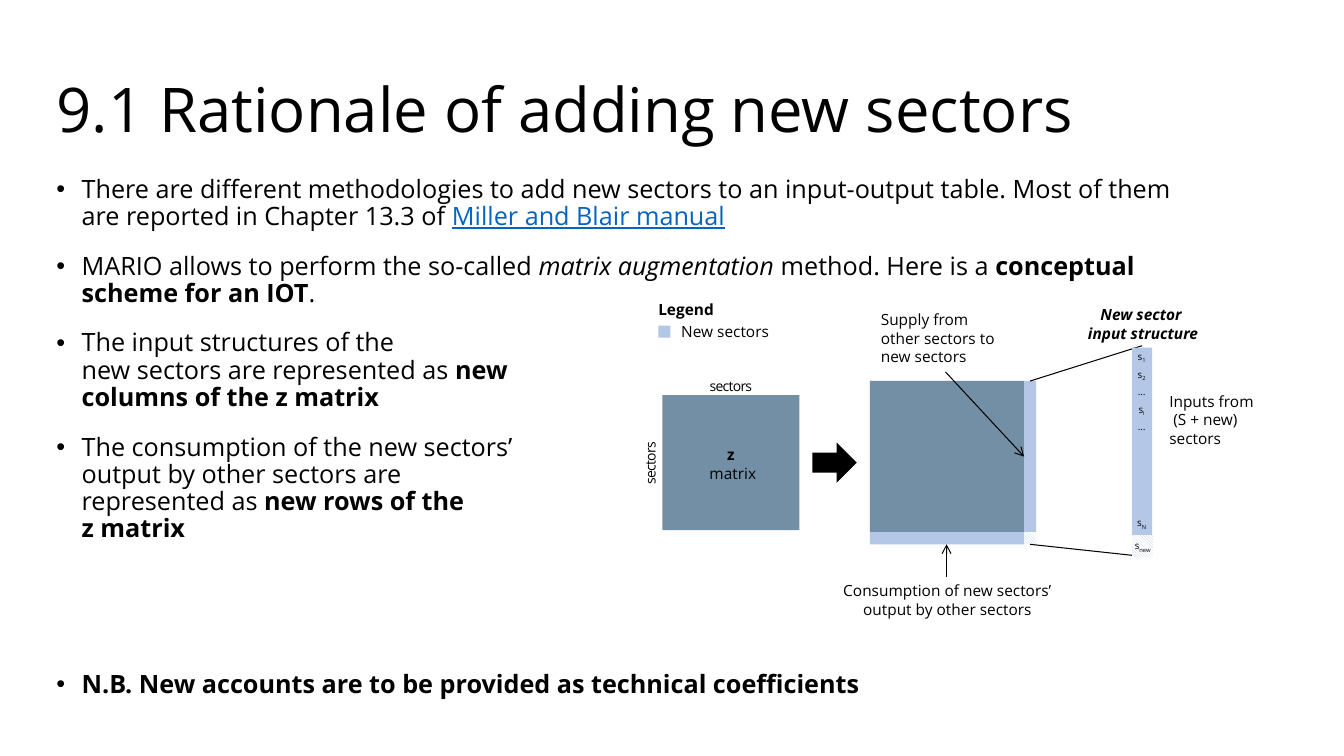
from lxml import etree
from pptx import Presentation
from pptx.dml.color import RGBColor as RGB
from pptx.enum.dml import MSO_PATTERN
from pptx.enum.shapes import MSO_CONNECTOR, MSO_SHAPE
from pptx.enum.text import MSO_ANCHOR, MSO_AUTO_SIZE, PP_ALIGN
from pptx.oxml.ns import qn
from pptx.util import Inches, Pt

W, H = Inches(13.33), Inches(7.5)
THEME = {
    "font": "Open Sans", "text": "000000", "link": "0563C1",
    "matrix": "728FA5", "new": "B4C7E7", "paper": "FFFFFF",
    "title": 44, "body": 18, "label": 11, "axis": 10, "cell": 7,
}
# Font properties and raw run attributes for each named run style
FONTS = {"b": {"bold": True}, "i": {"italic": True},
         "bi": {"bold": True, "italic": True}, "link": {"underline": True}}
RUN_XML = {"sub": {"baseline": "-25000"}, "tight": {"spc": "-50"}}
LEFT, CENTER = PP_ALIGN.LEFT, PP_ALIGN.CENTER

BULLETS = [
    [("There are different methodologies to add new sectors to an input-output table. "
      "Most of them are reported in Chapter 13.3 of ", ""),
     ("Miller and Blair manual", "link")],
    [("MARIO allows to perform the so-called ", ""), ("matrix augmentation", "i"),
     (" method. Here is a ", ""), ("conceptual scheme for an IOT", "b"), (".", "")],
    [("The input structures of the \nnew sectors are represented as ", ""),
     ("new\ncolumns of the z matrix", "b")],
    [("The consumption of the new sectors’\noutput by other sectors are \nrepresented as", ""),
     (" new rows of the \nz matrix", "b")],
    [("N.B. New accounts are to be provided as technical coefficients", "b")],
]


def color(name):
    return RGB.from_string(THEME[name])


def x(share):
    return round(W * share / 100)


def y(share):
    return round(H * share / 100)


def area(left, top, width, height):
    """Turn percentages of the slide into a position and size."""
    return x(left), y(top), x(width), y(height)


def set_all(target, values):
    for name, value in values.items():
        setattr(target, name, value)


def write(p, runs, size):
    for text, style in runs:
        for n, line in enumerate(text.split("\n")):
            if n:
                p.add_line_break()
            if not line:
                continue
            r = p.add_run()
            r.text = line
            set_all(r.font, {"name": THEME["font"], "size": Pt(THEME[size]),
                             **FONTS.get(style, {})})
            r.font.color.rgb = color("link" if style == "link" else "text")
            for name, value in RUN_XML.get(style, {}).items():
                r._r.get_or_add_rPr().set(name, value)


def fill_label(s, runs, size="label", align=CENTER, sides=(0.1, 0.1), ends=0.05):
    tf = s.text_frame
    set_all(tf, {"word_wrap": True, "auto_size": MSO_AUTO_SIZE.SHAPE_TO_FIT_TEXT,
                 "vertical_anchor": MSO_ANCHOR.TOP,
                 "margin_left": Inches(sides[0]), "margin_right": Inches(sides[1]),
                 "margin_top": Inches(ends), "margin_bottom": Inches(ends)})
    p = tf.paragraphs[0]
    set_all(p, {"alignment": align, "space_after": Pt(6)})
    write(p, runs, size)


def label(slide, box, runs, **options):
    s = slide.shapes.add_textbox(*area(*box))
    fill_label(s, runs, **options)
    return s


def block(slide, box, fill, kind=MSO_SHAPE.RECTANGLE):
    s = slide.shapes.add_shape(kind, *area(*box))
    s.shadow.inherit = False
    s.line.fill.background()
    if fill == "hatched":
        s.fill.patterned()
        s.fill.pattern = MSO_PATTERN.DARK_DOWNWARD_DIAGONAL
        s.fill.fore_color.rgb = color("new")
        s.fill.back_color.rgb = color("paper")
    else:
        s.fill.solid()
        s.fill.fore_color.rgb = color(fill)
    return s


def line(slide, start, end, arrow=False):
    s = slide.shapes.add_connector(MSO_CONNECTOR.STRAIGHT, x(start[0]), y(start[1]),
                                   x(end[0]), y(end[1]))
    s.line.color.rgb = color("text")
    s.line.width = Pt(0.75)
    if arrow:
        etree.SubElement(s.line._get_or_add_ln(), qn("a:tailEnd"), type="arrow")
    etree.SubElement(s._element.spPr, qn("a:effectLst"))


def place(s, box, anchor):
    s.left, s.top, s.width, s.height = area(*box)
    set_all(s.text_frame, {"word_wrap": True, "auto_size": MSO_AUTO_SIZE.NONE,
                           "vertical_anchor": anchor})
    return s.text_frame


def add_title(slide):
    tf = place(slide.shapes.title, (3.45, 0.13, 84.68, 19.87), MSO_ANCHOR.BOTTOM)
    p = tf.paragraphs[0]
    set_all(p, {"alignment": LEFT, "line_spacing": 0.9})
    write(p, [("9.1 Rationale of adding new sectors", "")], "title")


def add_bullets(slide):
    tf = place(slide.placeholders[1], (3.45, 22.67, 86.03, 72.27), MSO_ANCHOR.TOP)
    last = len(BULLETS) - 1
    for n, runs in enumerate(BULLETS):
        p = tf.add_paragraph() if n else tf.paragraphs[0]
        before = {0: 0, last: 86}.get(n, 10)
        set_all(p, {"alignment": LEFT, "line_spacing": 0.9,
                    "space_before": Pt(before), "space_after": Pt(6)})
        pPr = p._p.get_or_add_pPr()
        pPr.set("marL", str(Inches(0.25)))
        pPr.set("indent", str(-Inches(0.25)))
        etree.SubElement(pPr, qn("a:buFont"), typeface="Arial")
        etree.SubElement(pPr, qn("a:buChar"), char="•")
        write(p, runs, "body")


def add_legend(slide):
    label(slide, (48.98, 39.07, 7.88, 3.87), [("Legend", "b")], align=LEFT, sides=(0, 0.1))
    block(slide, (48.98, 43.07, 0.9, 1.6), "new")
    label(slide, (49.95, 42, 12.08, 3.87), [("New sectors", "")], align=LEFT)


def add_z_matrix(slide):
    block(slide, (49.28, 52.27, 10.2, 17.87), "matrix")
    label(slide, (51.68, 58.27, 5.4, 6.27), [("z\n", "b"), (" matrix", "")], sides=(0, 0))
    for box, turn in (((45.08, 60.13, 6.6, 2.27), 270), ((51.83, 50, 5.1, 2.27), 0)):
        s = label(slide, box, [("sectors", "tight")], size="axis", sides=(0, 0), ends=0)
        s.rotation = turn
    block(slide, (60.45, 58.53, 3.3, 5.33), "text", MSO_SHAPE.RIGHT_ARROW)


def add_augmented_matrix(slide):
    left, top, width, height = 64.73, 50.4, 11.47, 20
    thick, deep = 0.9, 1.6
    right, bottom = left + width, top + height
    block(slide, (left, top, width, height), "matrix")
    block(slide, (left, bottom, width, deep), "new")
    block(slide, (right, top, thick, height), "new")
    block(slide, (right, bottom, thick, deep), "hatched")

    label(slide, (64.8, 40.4, 11.18, 8.8),
          [("Supply from other sectors to new sectors", "")], align=LEFT)
    line(slide, (70.35, 49.2), (right, top + height / 2), arrow=True)
    label(slide, (60.6, 76.27, 19.8, 6.27),
          [("Consumption of new sectors’ output by other sectors", "")])
    line(slide, (70.43, 76.27), (70.43, bottom + deep), arrow=True)
    corner = right + thick / 2
    line(slide, (corner, top), (84.98, 45.73))
    line(slide, (corner, bottom + deep), (84.98, 73.6))


def add_input_column(slide):
    label(slide, (78.9, 39.73, 12.3, 6.27), [("New sector \ninput structure", "bi")])
    block(slide, (84.23, 46, 1.5, 25.07), "new")
    tops = [45.73 + 2.33 * n for n in range(5)] + [67.73]
    for top, index in zip(tops, ("1", "2", "", "i", "", "N")):
        runs = [("s", ""), (index, "sub")] if index else [("…", "")]
        label(slide, (84.15, top, 1.58, 2.93), runs, size="cell", sides=(0, 0))
    s = block(slide, (84.23, 70.8, 1.58, 2.93), "hatched")
    fill_label(s, [("s", ""), ("new", "sub")], size="cell", sides=(0, 0))
    label(slide, (86.7, 51.2, 9.38, 8.8), [("Inputs from\n (S + new) sectors", "")],
          align=LEFT, sides=(0.04, 0.1))


def main():
    prs = Presentation()
    prs.slide_width, prs.slide_height = W, H
    slide = prs.slides.add_slide(prs.slide_layouts[1])
    for add_part in (add_title, add_bullets, add_legend, add_z_matrix,
                     add_augmented_matrix, add_input_column):
        add_part(slide)
    prs.save("out.pptx")


if __name__ == "__main__":
    main()
